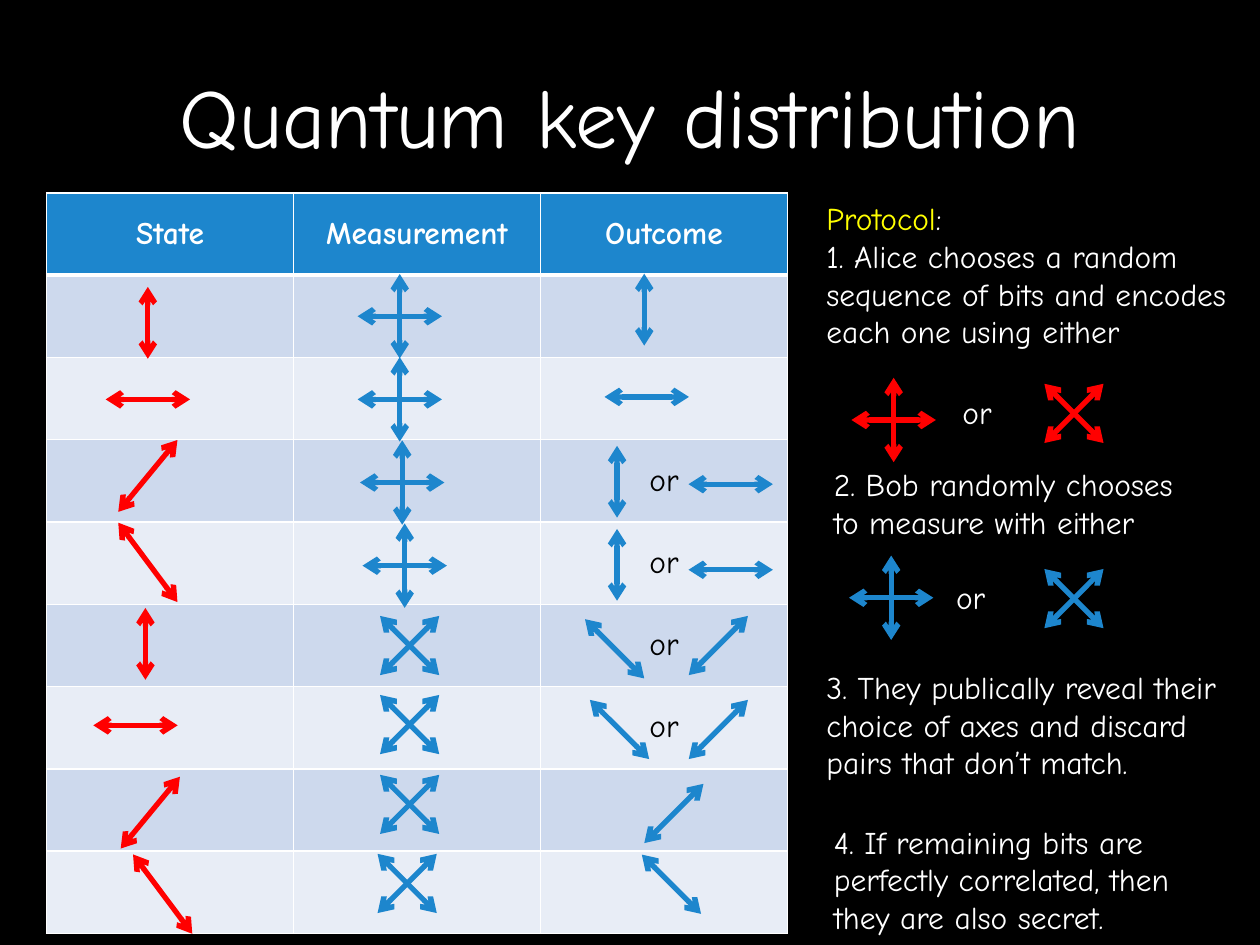
from dataclasses import dataclass
from lxml.etree import SubElement as Sub
from pptx import Presentation
from pptx.dml.color import RGBColor as RGB
from pptx.enum.shapes import MSO_CONNECTOR as Conn
from pptx.enum.text import MSO_ANCHOR as Anchor, MSO_AUTO_SIZE as Fit, PP_ALIGN as Align
from pptx.oxml.ns import qn
from pptx.util import Inches, Pt


@dataclass(frozen=True)
class Theme:
    font: str = "Comic Neue"
    title: int = 48
    body: int = 18
    line: int = 3
    rule: int = 1
    black: str = "000000"
    white: str = "FFFFFF"
    blue: str = "1D86CD"
    red: str = "FF0000"
    gold: str = "FFFF00"
    bands: tuple = ("E8EDF6", "CDD9ED")


T = Theme()
WIDE, HIGH = 10, 7.5
LEFT, TOP = 0.37, 1.53
COL, ROW = 5.88 / 3, 5.88 / 9

TITLE = "Quantum key distribution"
ROWS = [
    ("State", "Measurement", "Outcome"),
    ("", "", ""),
    ("", "", ""),
    ("", "", "or"),
    ("", "", "or"),
    ("", "", "or"),
    ("", "", "or"),
    ("", "", ""),
    ("", "", ""),
]

STEPS = [
    (6.46, 1.53, 3.55, 1.31, [
        ("Protocol", ":"),
        ("1. Alice chooses a random",),
        ("sequence of bits and encodes",),
        ("each one using either",)]),
    (7.54, 3.07, 0.44, 0.4, [("or",)]),
    (6.52, 3.64, 3.01, 0.71, [
        ("2. Bob randomly chooses",),
        ("to measure with either",)]),
    (7.49, 4.54, 0.44, 0.4, [("or",)]),
    (6.46, 5.25, 3.61, 1.01, [
        ("3. They publically reveal their",),
        ("choice of axes and discard",),
        ("pairs that don’t match.",)]),
    (6.52, 6.48, 3.19, 1.01, [
        ("4. If remaining bits are",),
        ("perfectly correlated, then",),
        ("they are also secret.",)]),
]

SIGNS = {
    "up": [(0, 0.57)],
    "flat": [(0.67, 0)],
    "rise": [(0.47, -0.47)],
    "fall": [(0.47, 0.47)],
    "climb": [(0.47, -0.57)],
    "drop": [(0.47, 0.63)],
    "plus": [(0, 0.67), (0.67, 0)],
    "cross": [(0.47, 0.47), (0.47, -0.47)],
}

MARKS = {
    T.red: [
        ("up", 0.41, 1.58), ("flat", 0.41, 2.51),
        ("climb", 0.41, 3.44), ("drop", 0.41, 4.49),
        ("up", 0.4, 5.48), ("flat", 0.36, 6.47),
        ("climb", 0.42, 7.53), ("drop", 0.47, 8.52),
        ("plus", 3.43, 2.76), ("cross", 4.16, 2.68),
    ],
    T.blue: [
        ("plus", 1.43, 1.5), ("plus", 1.43, 2.51),
        ("plus", 1.44, 3.52), ("plus", 1.45, 4.53),
        ("cross", 1.47, 5.5), ("cross", 1.47, 6.46),
        ("cross", 1.47, 7.43), ("cross", 1.46, 8.39),
        ("up", 2.42, 1.42), ("flat", 2.43, 2.48),
        ("up", 2.31, 3.51), ("flat", 2.77, 3.54),
        ("up", 2.31, 4.52), ("flat", 2.77, 4.58),
        ("fall", 2.3, 5.54), ("rise", 2.72, 5.5),
        ("fall", 2.32, 6.52), ("rise", 2.72, 6.52),
        ("rise", 2.54, 7.54), ("fall", 2.53, 8.4),
        ("plus", 3.42, 4.92), ("cross", 4.16, 4.93),
    ],
}


def style(font, size, color, bold=False):
    font.name, font.size, font.bold = T.font, Pt(size), bold
    font.color.rgb = RGB.from_string(color)


def edge(cell, head):
    props = cell._tc.get_or_add_tcPr()
    for side in "LRTB":
        width = T.line if head and side == "B" else T.rule
        line = Sub(props, qn(f"a:ln{side}"), w=str(Pt(width)))
        Sub(Sub(line, qn("a:solidFill")), qn("a:srgbClr"), val=T.white)


def add_grid(slide):
    table = slide.shapes.add_table(
        len(ROWS), len(ROWS[0]), Inches(LEFT), Inches(TOP),
        Inches(COL * len(ROWS[0])), Inches(ROW * len(ROWS))).table
    for r, row in enumerate(ROWS):
        head = r == 0
        for c, word in enumerate(row):
            cell = table.cell(r, c)
            edge(cell, head)
            cell.fill.solid()
            cell.fill.fore_color.rgb = RGB.from_string(T.blue if head else T.bands[r % 2])
            cell.vertical_anchor = Anchor.MIDDLE
            cell.text_frame.text = word
            para = cell.text_frame.paragraphs[0]
            para.alignment = Align.CENTER
            style(para.font, T.body, T.white if head else T.black, head)
            for run in para.runs:
                style(run.font, T.body, T.white if head else T.black, head)


def add_step(slide, x, y, w, h, lines):
    frame = slide.shapes.add_textbox(*map(Inches, (x, y, w, h))).text_frame
    frame.word_wrap = False
    frame.auto_size = Fit.SHAPE_TO_FIT_TEXT
    para = frame.paragraphs[0]
    for n, parts in enumerate(lines):
        if n:
            para.add_line_break()
        for part in parts:
            run = para.add_run()
            run.text = part
            style(run.font, T.body, T.gold if part == "Protocol" else T.white)


def add_sign(slide, sign, col, row, color):
    x, y = LEFT + col * COL, TOP + row * ROW
    for dx, dy in SIGNS[sign]:
        ends = (x - dx / 2, y - dy / 2, x + dx / 2, y + dy / 2)
        arrow = slide.shapes.add_connector(Conn.STRAIGHT, *map(Inches, ends))
        arrow.line.width = Pt(T.line)
        arrow.line.color.rgb = RGB.from_string(color)
        for tip in ("a:headEnd", "a:tailEnd"):
            Sub(arrow.line._get_or_add_ln(), qn(tip), type="arrow")
        Sub(arrow._element.spPr, qn("a:effectLst"))


def main():
    deck = Presentation()
    deck.slide_width, deck.slide_height = Inches(WIDE), Inches(HIGH)
    slide = deck.slides.add_slide(deck.slide_layouts[5])
    slide.background.fill.solid()
    slide.background.fill.fore_color.rgb = RGB.from_string(T.black)

    add_grid(slide)
    title = slide.shapes.title
    title.left, title.top, title.width, title.height = map(Inches, (0.75, 0.13, 8.5, 1.56))
    frame = title.text_frame
    frame.text = TITLE
    frame.auto_size = Fit.NONE
    frame.vertical_anchor = Anchor.MIDDLE
    frame.paragraphs[0].alignment = Align.CENTER
    style(frame.paragraphs[0].runs[0].font, T.title, T.white)

    for color, marks in MARKS.items():
        for mark in marks:
            add_sign(slide, *mark, color)
    for step in STEPS:
        add_step(slide, *step)
    deck.save("out.pptx")


if __name__ == "__main__":
    main()
